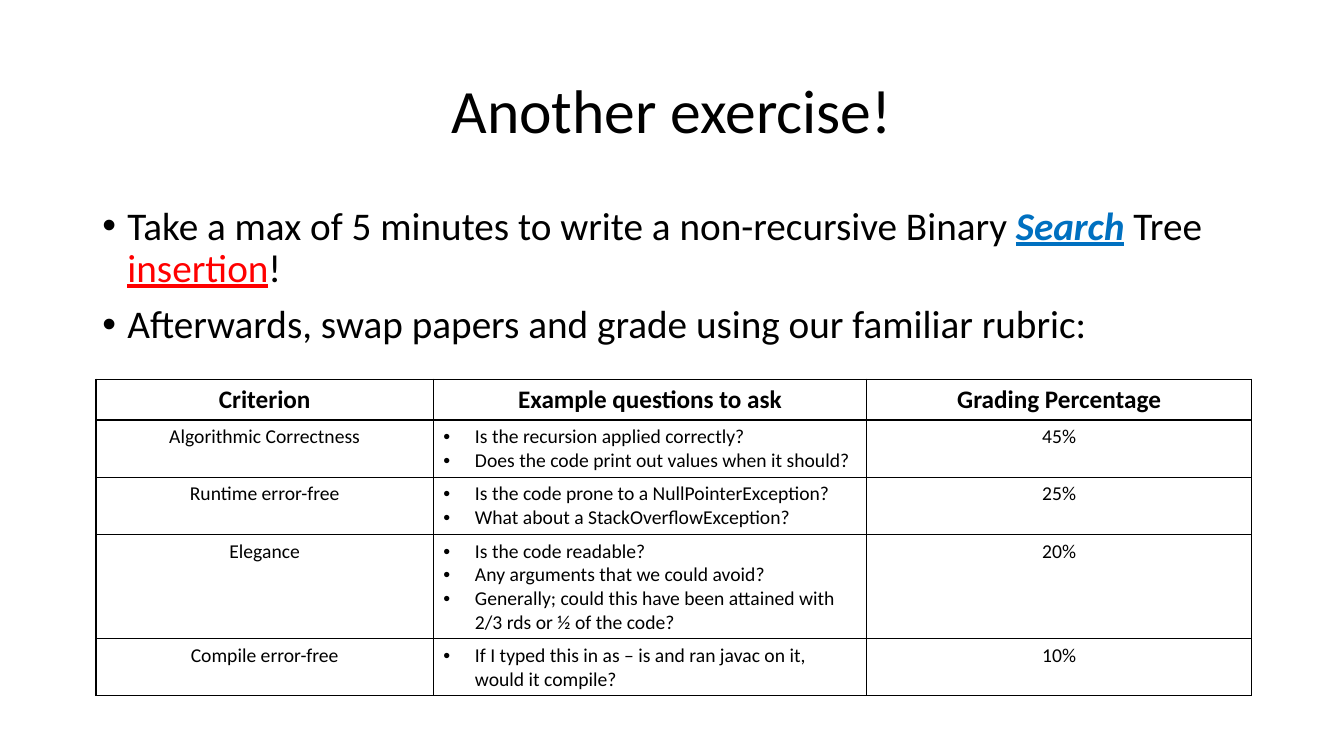
from lxml import etree
from pptx import Presentation
from pptx import util as u
from pptx.dml.color import RGBColor
from pptx.enum import text
from pptx.oxml import ns

COLOURS = {"ink": "000000", "search": "0070C0", "insertion": "FF0000"}
TASKS = [
    [("Take a max of 5 minutes to write a non-recursive Binary ", {}),
     ("Search", {"colour": "search", "bold": True, "italic": True, "underline": True}),
     (" Tree ", {}),
     ("insertion", {"colour": "insertion", "underline": True}),
     ("!", {})],
    [("Afterwards, swap papers and grade using our familiar rubric:", {})],
]
HEADINGS = ["Criterion", "Example questions to ask", "Grading Percentage"]
RUBRIC = [
    ("Algorithmic Correctness",
     ["Is the recursion applied correctly?",
      "Does the code print out values when it should?"], "45%"),
    ("Runtime error-free",
     ["Is the code prone to a NullPointerException?",
      "What about a StackOverflowException?"], "25%"),
    ("Elegance",
     ["Is the code readable?",
      "Any arguments that we could avoid?",
      "Generally; could this have been attained with 2/3 rds or ½ of the code?"], "20%"),
    ("Compile error-free",
     ["If I typed this in as – is and ran javac on it, would it compile?"], "10%"),
]


class SlideWriter:
    """Hold the text style and the current slide, and add its elements."""

    def __init__(self, page, font="Calibri"):
        self.page = page
        self.font = font

    def span(self, para, words, size, colour="ink", bold=False, italic=False, underline=False):
        span = para.add_run()
        span.text = words
        font = span.font
        font.name, font.size = self.font, u.Pt(size)
        font.bold, font.italic, font.underline = bold, italic, underline
        font.color.rgb = RGBColor.from_string(COLOURS[colour])

    def bullet(self, para, indent):
        properties = para._p.get_or_add_pPr()
        properties.set("marL", str(u.Pt(indent)))
        properties.set("indent", str(u.Pt(-indent)))
        etree.SubElement(properties, ns.qn("a:buFont"), typeface="Arial")
        etree.SubElement(properties, ns.qn("a:buChar"), char="•")

    def paragraphs(self, frame, count):
        return [frame.paragraphs[0]] + [frame.add_paragraph() for _ in range(count - 1)]

    def title(self, words, left, top, width, height):
        box = self.page.shapes.title
        box.left, box.top, box.width, box.height = map(u.Pt, (left, top, width, height))
        frame = box.text_frame
        frame.auto_size = text.MSO_AUTO_SIZE.NONE
        frame.vertical_anchor = text.MSO_ANCHOR.MIDDLE
        para = frame.paragraphs[0]
        para.alignment = text.PP_ALIGN.CENTER
        para.line_spacing = 0.9
        self.span(para, words, 44)

    def bullets(self, items, left, top, width, height):
        box = self.page.shapes.add_textbox(*map(u.Pt, (left, top, width, height)))
        frame = box.text_frame
        frame.word_wrap = True
        for para, spans in zip(self.paragraphs(frame, len(items)), items):
            para.line_spacing = 0.9
            para.space_before = u.Pt(10)
            self.bullet(para, 18)
            for words, style in spans:
                self.span(para, words, 28, **style)

    def cell(self, cell, content, size, bold):
        cell.fill.background()
        self.borders(cell)
        listed = isinstance(content, list)
        lines = content if listed else [content]
        for para, words in zip(self.paragraphs(cell.text_frame, len(lines)), lines):
            if listed:
                self.bullet(para, 22.5)
            else:
                para.alignment = text.PP_ALIGN.CENTER
            self.span(para, words, size, bold=bold)

    def borders(self, cell):
        properties = cell._tc.get_or_add_tcPr()
        for index, side in enumerate(("lnL", "lnR", "lnT", "lnB")):
            line = etree.Element(ns.qn(f"a:{side}"), w=str(u.Pt(1)))
            fill = etree.SubElement(line, ns.qn("a:solidFill"))
            etree.SubElement(fill, ns.qn("a:srgbClr"), val=COLOURS["ink"])
            properties.insert(index, line)

    def table(self, rows, left, top, widths, row_height):
        frame = self.page.shapes.add_table(
            len(rows), len(widths),
            *map(u.Pt, (left, top, sum(widths), row_height * len(rows))))
        table = frame.table
        table.first_row = table.horz_banding = False
        for column, width in zip(table.columns, widths):
            column.width = u.Pt(width)
        for index, row in enumerate(rows):
            table.rows[index].height = u.Pt(row_height)
            for cell, content in zip(table.rows[index].cells, row):
                self.cell(cell, content, 14 if index else 18, bold=index == 0)


def main():
    deck = Presentation()
    deck.slide_width, deck.slide_height = u.Pt(960), u.Pt(540)
    writer = SlideWriter(deck.slides.add_slide(deck.slide_layouts[5]))
    writer.title("Another exercise!", 66, 28.75, 828, 104.4)
    writer.bullets(TASKS, 66, 143.75, 828, 342.6)
    writer.table([HEADINGS, *RUBRIC], 68.6, 270.8, [241, 309.5, 275], 29.2)
    deck.save("out.pptx")


if __name__ == "__main__":
    main()
